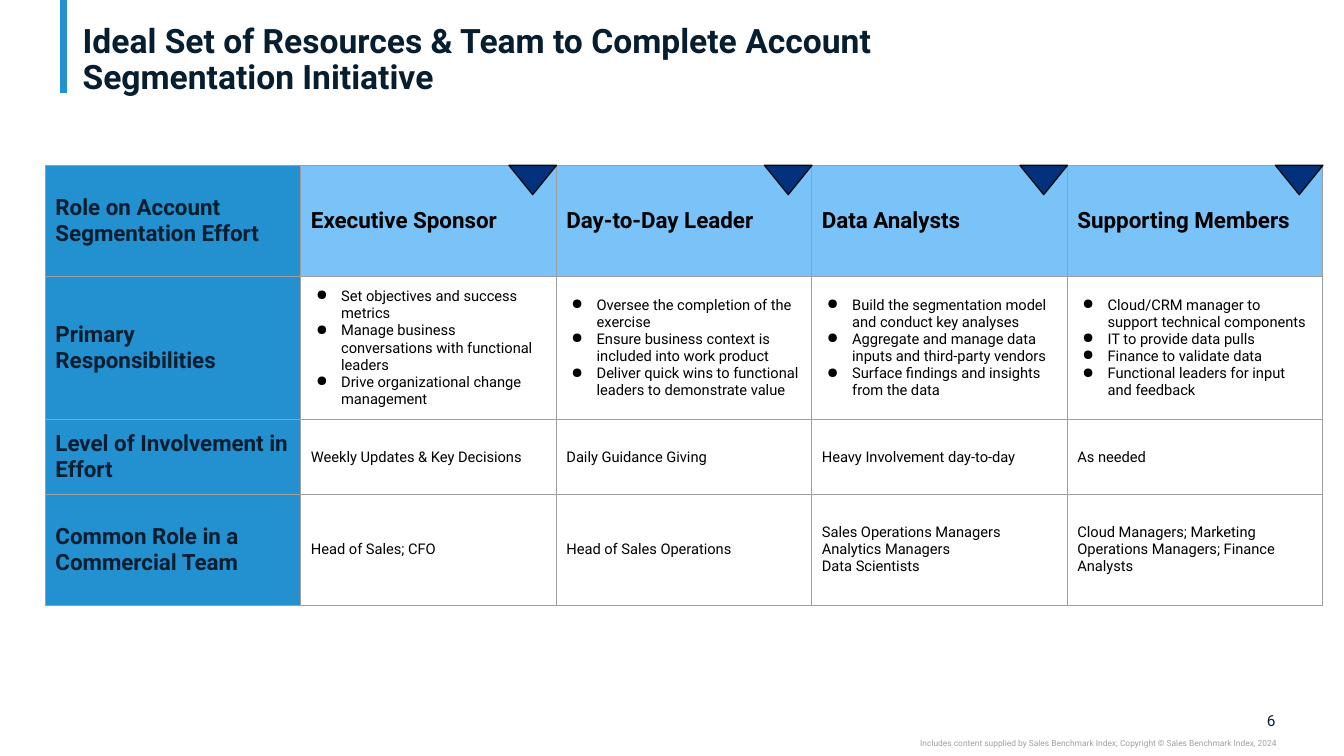
from dataclasses import dataclass
from itertools import accumulate
from typing import Any, NamedTuple

from pptx import Presentation
from pptx.dml.color import RGBColor
from pptx.enum.shapes import MSO_CONNECTOR, MSO_SHAPE
from pptx.enum.text import MSO_ANCHOR, PP_ALIGN
from pptx.oxml import parse_xml
from pptx.oxml.ns import nsdecls
from pptx.util import Emu, Inches, Pt


@dataclass(frozen=True)
class Theme:
    font: str = "Roboto"
    ink: str = "071E31"
    black: str = "000000"
    blue: str = "2391CF"
    sky: str = "7AC3F8"
    navy: str = "03327C"
    outline: str = "030D15"
    border: str = "9E9E9E"
    muted: str = "A0A0A0"
    title_size: float = 24
    heading_size: float = 16
    body_size: float = 10.5
    number_size: float = 11
    credit_size: float = 6


class Box(NamedTuple):
    """Left, top, width and height in percent of the slide."""
    left: float
    top: float
    width: float
    height: float


class Label(NamedTuple):
    text: str
    box: Box
    size: float
    color: str


class Row(NamedTuple):
    height: float
    heading: str
    cells: list[list[str]]
    bulleted: bool = False


THEME = Theme()
WIDTH, HEIGHT = Inches(13.33), Inches(7.5)

TITLE = "Ideal Set of Resources & Team to Complete Account Segmentation Initiative"
TITLE_BOX = Box(5.4, 0, 76.52, 16)
ACCENT = Box(4.73, 0, 0, 12.27)
LABELS = [
    Label("6", Box(92.42, 94, 2.48, 2.53), THEME.number_size, THEME.ink),
    Label("Includes content supplied by Sales Benchmark Index; "
          "Copyright © Sales Benchmark Index, 2024",
          Box(56.26, 97.6, 38.71, 1.33), THEME.credit_size, THEME.muted),
]

TABLE_LEFT, TABLE_TOP, COLUMN = 3.38, 21.87, 19.01
MARKER_WIDTH, MARKER_HEIGHT = 3.53, 3.87
ROWS = [
    Row(14.67, "Role on Account Segmentation Effort", [
        ["Executive Sponsor"], ["Day-to-Day Leader"],
        ["Data Analysts"], ["Supporting Members"]]),
    Row(18.67, "Primary Responsibilities", [
        ["Set objectives and success metrics",
         "Manage business conversations with functional leaders",
         "Drive organizational change management"],
        ["Oversee the completion of the exercise",
         "Ensure business context is included into work product",
         "Deliver quick wins to functional leaders to demonstrate value"],
        ["Build the segmentation model and conduct key analyses",
         "Aggregate and manage data inputs and third-party vendors",
         "Surface findings and insights from the data"],
        ["Cloud/CRM manager to support technical components",
         "IT to provide data pulls",
         "Finance to validate data",
         "Functional leaders for input and feedback"]], bulleted=True),
    Row(9.87, "Level of Involvement in Effort", [
        ["Weekly Updates & Key Decisions"], ["Daily Guidance Giving"],
        ["Heavy Involvement day-to-day"], ["As needed"]]),
    Row(14.67, "Common Role in a Commercial Team", [
        ["Head of Sales; CFO"], ["Head of Sales Operations"],
        ["Sales Operations Managers", "Analytics Managers", "Data Scientists"],
        ["Cloud Managers; Marketing Operations Managers; Finance Analysts"]]),
]


def across(percent: float) -> Emu:
    return Emu(round(WIDTH * percent / 100))


def down(percent: float) -> Emu:
    return Emu(round(HEIGHT * percent / 100))


def place(box: Box) -> tuple[Emu, Emu, Emu, Emu]:
    return across(box.left), down(box.top), across(box.width), down(box.height)


def apply(target: Any, values: dict[str, Any]) -> None:
    for name, value in values.items():
        setattr(target, name, value)


def write(p: Any, text: str, size: float, color: str, bold: bool = False) -> None:
    r = p.add_run()
    r.text = text
    apply(r.font, {"name": THEME.font, "size": Pt(size), "bold": bold})
    r.font.color.rgb = RGBColor.from_string(color)


def add_bullet(p: Any) -> None:
    pPr = p._p.get_or_add_pPr()
    pPr.set("marL", str(Inches(0.3)))
    pPr.set("indent", str(Inches(-0.25)))
    pPr.append(parse_xml(f'<a:buClr {nsdecls("a")}><a:srgbClr val="{THEME.black}"/></a:buClr>'))
    pPr.append(parse_xml(f'<a:buChar {nsdecls("a")} char="●"/>'))


def add_borders(cell: Any) -> None:
    tcPr = cell._tc.get_or_add_tcPr()
    for side in "LRTB":
        tcPr.append(parse_xml(
            f'<a:ln{side} {nsdecls("a")} w="{Pt(0.75)}"><a:solidFill>'
            f'<a:srgbClr val="{THEME.border}"/></a:solidFill></a:ln{side}>'))


def fill_cell(cell: Any, lines: list[str], size: float, color: str,
              bold: bool, fill: str | None, bulleted: bool) -> None:
    margin = Inches(0.1)
    apply(cell, {"margin_left": margin, "margin_right": margin, "margin_top": margin,
                 "margin_bottom": margin, "vertical_anchor": MSO_ANCHOR.MIDDLE})
    add_borders(cell)
    if fill:
        cell.fill.solid()
        cell.fill.fore_color.rgb = RGBColor.from_string(fill)
    else:
        cell.fill.background()
    tf = cell.text_frame
    for i, line in enumerate(lines):
        p = tf.add_paragraph() if i else tf.paragraphs[0]
        if bulleted:
            add_bullet(p)
        write(p, line, size, color, bold)


def add_title(s: Any) -> None:
    sp = s.shapes.title
    apply(sp, dict(zip(("left", "top", "width", "height"), place(TITLE_BOX))))
    tf = sp.text_frame
    apply(tf, {"vertical_anchor": MSO_ANCHOR.MIDDLE, "word_wrap": True,
               "margin_right": across(7.5)})
    p = tf.paragraphs[0]
    apply(p, {"alignment": PP_ALIGN.LEFT, "line_spacing": 0.9})
    write(p, TITLE, THEME.title_size, THEME.ink, bold=True)


def add_accent(s: Any) -> None:
    x, y, w, h = place(ACCENT)
    line = s.shapes.add_connector(MSO_CONNECTOR.STRAIGHT, x, y, x + w, y + h)
    line.line.color.rgb = RGBColor.from_string(THEME.blue)
    line.line.width = Pt(5)
    line._element.spPr.append(parse_xml(f'<a:effectLst {nsdecls("a")}/>'))


def add_label(s: Any, label: Label) -> None:
    tf = s.shapes.add_textbox(*place(label.box)).text_frame
    apply(tf, {"margin_left": 0, "margin_right": 0, "margin_top": 0, "margin_bottom": 0,
               "word_wrap": True, "vertical_anchor": MSO_ANCHOR.MIDDLE})
    p = tf.paragraphs[0]
    p.alignment = PP_ALIGN.RIGHT
    write(p, label.text, label.size, label.color)


def add_roles_table(s: Any) -> None:
    columns = len(ROWS[0].cells) + 1
    box = Box(TABLE_LEFT, TABLE_TOP, COLUMN * columns, sum(row.height for row in ROWS))
    table = s.shapes.add_table(len(ROWS), columns, *place(box)).table
    apply(table, {"first_row": False, "horz_banding": False})
    for column in table.columns:
        column.width = across(COLUMN)
    for i, row in enumerate(ROWS):
        table.rows[i].height = down(row.height)
        fill_cell(table.cell(i, 0), [row.heading], THEME.heading_size, THEME.ink,
                  True, THEME.blue, False)
        header = i == 0
        for j, lines in enumerate(row.cells, 1):
            fill_cell(table.cell(i, j), lines,
                      THEME.heading_size if header else THEME.body_size, THEME.black,
                      header, THEME.sky if header else None, row.bulleted)


def add_markers(s: Any) -> None:
    """Hang a triangle in the top right corner of each role column."""
    edges = accumulate([COLUMN] * len(ROWS[0].cells), initial=TABLE_LEFT + COLUMN)
    for right in list(edges)[1:]:
        box = Box(right - MARKER_WIDTH, TABLE_TOP, MARKER_WIDTH, MARKER_HEIGHT)
        sp = s.shapes.add_shape(MSO_SHAPE.ISOSCELES_TRIANGLE, *place(box))
        sp.rotation = 180
        sp.shadow.inherit = False
        sp.fill.solid()
        sp.fill.fore_color.rgb = RGBColor.from_string(THEME.navy)
        sp.line.color.rgb = RGBColor.from_string(THEME.outline)
        sp.line.width = Pt(1)


def main() -> None:
    prs = Presentation()
    apply(prs, {"slide_width": WIDTH, "slide_height": HEIGHT})
    s = prs.slides.add_slide(prs.slide_layouts[5])
    add_accent(s)
    for label in LABELS:
        add_label(s, label)
    add_title(s)
    add_roles_table(s)
    add_markers(s)
    prs.save("out.pptx")


if __name__ == "__main__":
    main()
